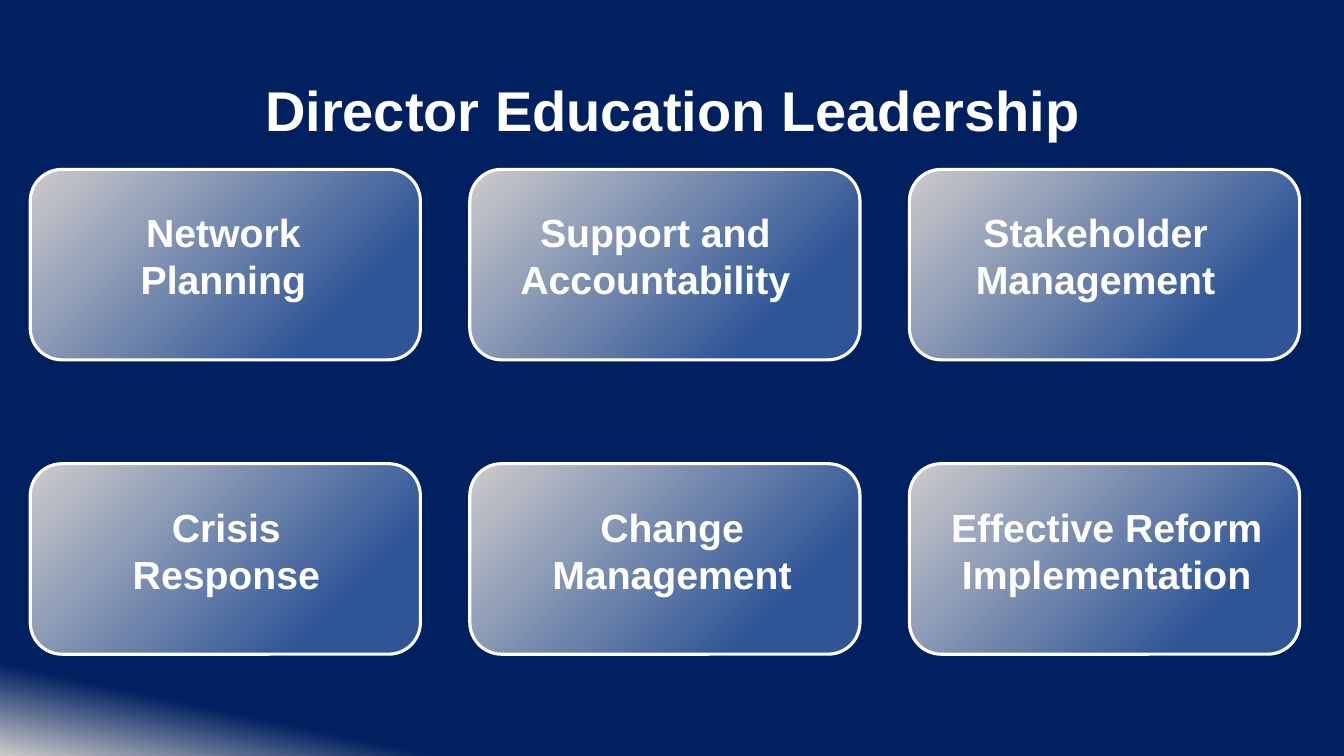
from pptx import Presentation
from pptx import util as u
from pptx.dml.color import RGBColor
from pptx.enum import shapes, text

COLORS = {"navy": "002060", "blue": "2F5597", "silver": "CDCBCB", "white": "FFFFFF"}
FONT = {"name": "Arial", "bold": True}

# Card grid, in inches
LEFT, TOP = 0.3, 1.68
COLUMN_STEP, ROW_STEP = 4.36, 2.92
CARD_WIDTH, CARD_HEIGHT = 3.87, 1.89
LABEL_DROP, LABEL_HEIGHT = 0.34, 1.04

# Rows of labels: wording, left edge, width
LABELS = [
    [("Network Planning", 1.04, 2.35),
     ("Support and Accountability", 5.02, 2.96),
     ("Stakeholder Management", 9.32, 3.09)],
    [("Crisis Response", 0.76, 2.97),
     ("Change Management", 5.22, 2.89),
     ("Effective Reform Implementation", 9.32, 3.31)],
]


def fade_to_silver(fill, color, start, angle):
    """Fade from color at share start to silver; angle runs anticlockwise."""
    fill.gradient()
    fill.gradient_angle = angle
    for stop, name, position in zip(fill.gradient_stops, (color, "silver"), (start, 1)):
        stop.color.rgb = RGBColor.from_string(COLORS[name])
        stop.position = position


def add_label(page, wording, left, top, width, height, size):
    box = page.shapes.add_textbox(*map(u.Inches, (left, top, width, height)))
    box.text_frame.word_wrap = True
    para = box.text_frame.paragraphs[0]
    para.alignment = text.PP_ALIGN.CENTER
    span = para.add_run()
    span.text = wording
    for key, value in FONT.items():
        setattr(span.font, key, value)
    span.font.size = u.Pt(size)
    span.font.color.rgb = RGBColor.from_string(COLORS["white"])
    return box


deck = Presentation()
deck.slide_width, deck.slide_height = u.Inches(13.33), u.Inches(7.5)
page = deck.slides.add_slide(deck.slide_layouts[6])
fade_to_silver(page.background.fill, "navy", 0.91, 258)

title = add_label(page, "Director Education Leadership", 0.92, 0.4, 11.5, 1.45, 40)
title.text_frame.vertical_anchor = text.MSO_ANCHOR.MIDDLE
title.text_frame.paragraphs[0].line_spacing = 0.9

for row, labels in enumerate(LABELS):
    top = TOP + row * ROW_STEP
    for column, (wording, label_left, label_width) in enumerate(labels):
        card = page.shapes.add_shape(
            shapes.MSO_SHAPE.ROUNDED_RECTANGLE,
            u.Inches(LEFT + column * COLUMN_STEP), u.Inches(top),
            u.Inches(CARD_WIDTH), u.Inches(CARD_HEIGHT))
        card.shadow.inherit = False
        fade_to_silver(card.fill, "blue", 0.22, 135)
        card.line.color.rgb = RGBColor.from_string(COLORS["white"])
        card.line.width = u.Pt(2.25)

        label = add_label(page, wording, label_left, top + LABEL_DROP,
                          label_width, LABEL_HEIGHT, 28)
        label.text_frame.auto_size = text.MSO_AUTO_SIZE.SHAPE_TO_FIT_TEXT

deck.save("out.pptx")
